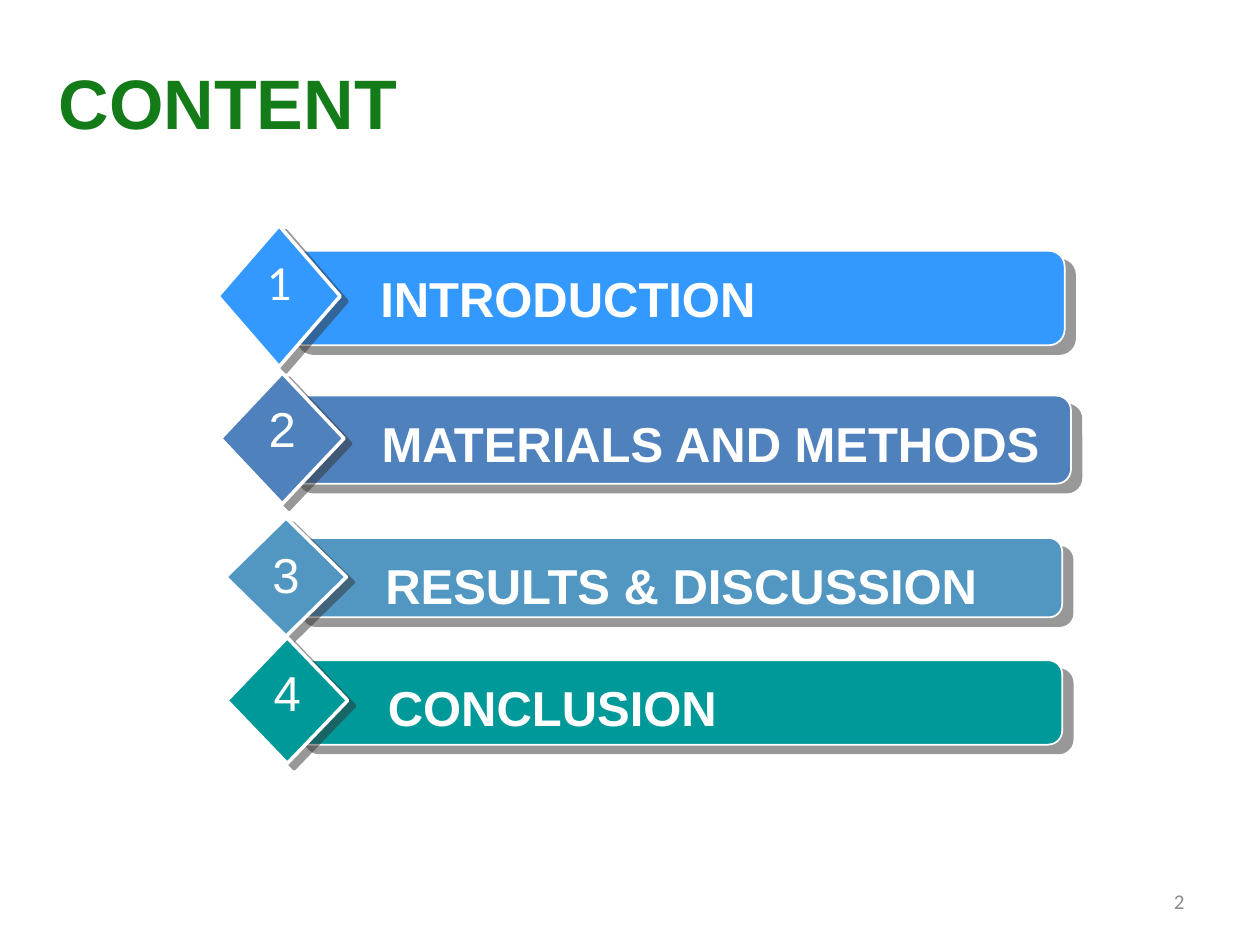
from lxml.etree import SubElement
from pptx import Presentation
from pptx.dml.color import RGBColor
from pptx.enum.shapes import MSO_SHAPE
from pptx.enum.text import MSO_ANCHOR, PP_ALIGN
from pptx.oxml.ns import qn
from pptx.util import Inches, Pt

WHITE, GREEN, GREY = "FFFFFF", "137B18", "8C8C8C"
TITLE = "CONTENT"
# label, colour, number font, number top, bar box, diamond box
ITEMS = [
    ("INTRODUCTION", "3399FF", "Calibri", 1.95, (2.28, 1.99, 6.17, 0.75), (1.73, 1.79, 0.97, 1.12)),
    ("MATERIALS AND METHODS", "4F81BD", "Arial", 3.11, (2.29, 3.14, 6.21, 0.7), (1.75, 2.96, 0.98, 1.04)),
    ("RESULTS & DISCUSSION", "5297C2", "Arial", 4.27, (2.32, 4.27, 6.11, 0.63), (1.79, 4.11, 0.96, 0.94)),
    ("CONCLUSION", "009999", "Arial", 5.21, (2.34, 5.24, 6.09, 0.67), (1.8, 5.06, 0.96, 1)),
]


def tint(code):
    return RGBColor.from_string(code)


def style(font, face, size, color, bold=False):
    font.name, font.size, font.bold = face, Pt(size), bold
    font.color.rgb = tint(color)


def shade(effects, color, alpha, dist, angle, blur=0):
    shadow = SubElement(effects, qn("a:outerShdw"), blurRad=str(Pt(blur)), dist=str(Pt(dist)),
                        dir=str(angle * 60000), algn="ctr", rotWithShape="0")
    fill = SubElement(shadow, qn("a:srgbClr"), val=color)
    SubElement(fill, qn("a:alpha"), val=str(alpha * 1000))


def block(group, kind, box, color, width, dist, angle):
    shape = group.shapes.add_shape(kind, *map(Inches, box))
    shape.fill.solid()
    shape.fill.fore_color.rgb = tint(color)
    shape.line.color.rgb = tint(WHITE)
    shape.line.width = Pt(width)
    shape.shadow.inherit = False
    shade(shape._element.spPr.find(qn("a:effectLst")), "333333", 50, dist, angle)


def label(home, text, box, face, size, color, align, bold=False):
    frame = home.shapes.add_textbox(*map(Inches, box)).text_frame
    frame.word_wrap = True
    para = frame.paragraphs[0]
    para.text, para.alignment = text, align
    style(para.font, face, size, color, bold)
    return frame


def main():
    """Build the numbered contents slide."""
    deck = Presentation()
    deck.slide_width, deck.slide_height = Inches(10), Inches(7.5)
    slide = deck.slides.add_slide(deck.slide_layouts[5])

    title = slide.shapes.title
    title.left, title.top, title.width, title.height = map(Inches, (0, 0.42, 3.25, 0.77))
    frame = title.text_frame
    frame.vertical_anchor = MSO_ANCHOR.TOP
    para = frame.paragraphs[0]
    para.alignment = PP_ALIGN.RIGHT
    run = para.add_run()
    run.text = TITLE
    style(run.font, "Arial", 40, GREEN, True)
    effects = run.font._element.makeelement(qn("a:effectLst"))
    run.font._element.find(qn("a:solidFill")).addnext(effects)
    shade(effects, "000000", 45, 3, 90, 3)

    for num, (text, color, face, top, bar, gem) in enumerate(ITEMS, 1):
        group = slide.shapes.add_group_shape()
        block(group, MSO_SHAPE.ROUNDED_RECTANGLE, bar, color, 1, 7.8, 40)
        block(group, MSO_SHAPE.DIAMOND, gem, color, 2, 5, 37)
        left, high, wide, _ = bar
        label(group, text, (left + 0.64, high + 0.09, wide - 0.64, 0.57),
              "Arial", 28, WHITE, PP_ALIGN.LEFT, True)
        mid = gem[0] + gem[2] / 2
        frame = label(group, str(num), (mid - 0.22, top, 0.44, 0.57),
                      face, 28, WHITE, PP_ALIGN.CENTER)
        frame.margin_left = frame.margin_right = 0

    frame = label(slide, "2", (7.17, 6.95, 2.33, 0.4), "Calibri", 12, GREY, PP_ALIGN.RIGHT)
    frame.vertical_anchor = MSO_ANCHOR.MIDDLE
    deck.save("out.pptx")


if __name__ == "__main__":
    main()
